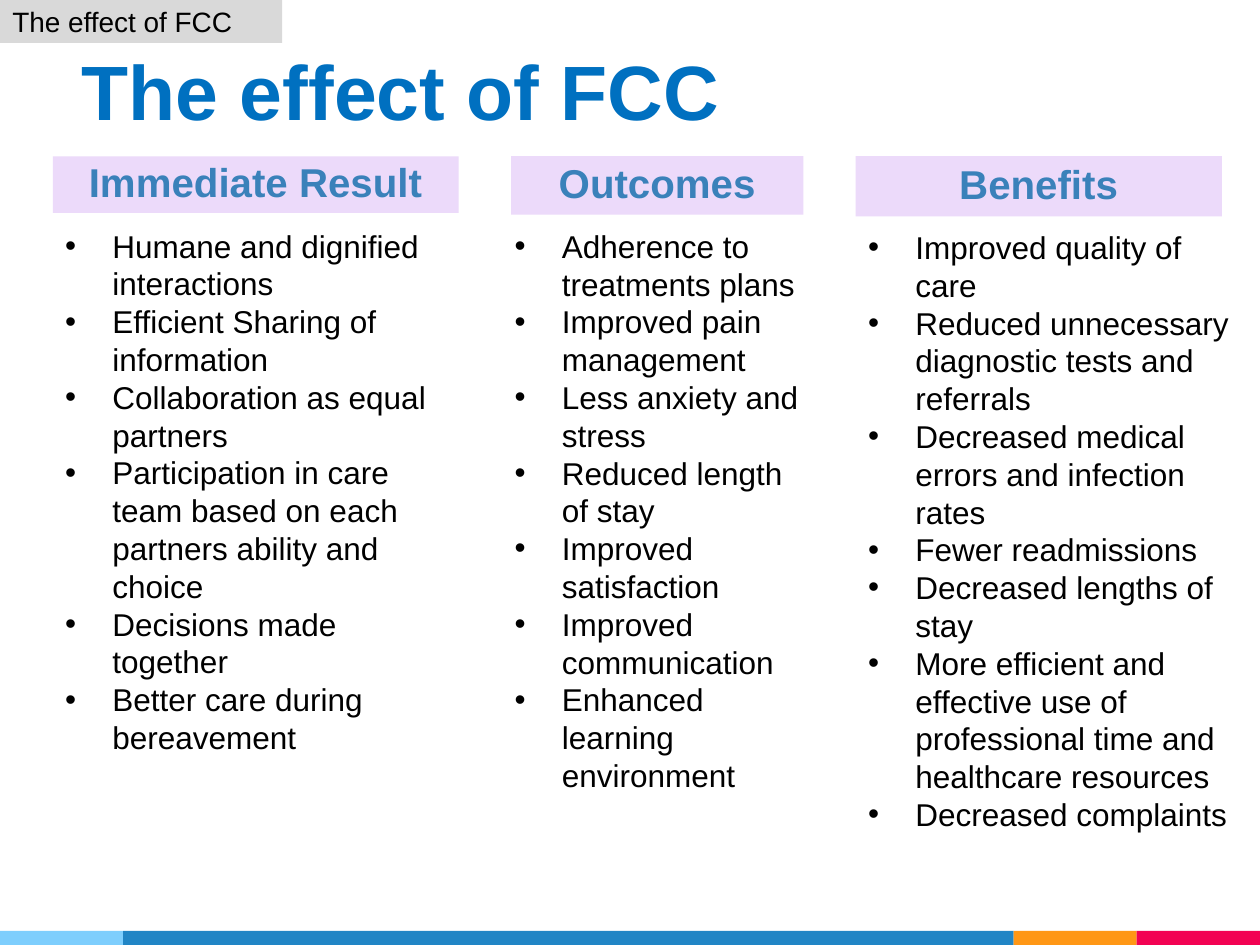
from dataclasses import dataclass

from lxml import etree
from pptx import Presentation
from pptx.dml.color import RGBColor
from pptx.enum.shapes import MSO_SHAPE
from pptx.enum.text import MSO_ANCHOR, MSO_AUTO_SIZE, PP_ALIGN
from pptx.oxml.ns import qn
from pptx.util import Pt

RECTANGLE = MSO_SHAPE.RECTANGLE
LEFT, CENTER = PP_ALIGN.LEFT, PP_ALIGN.CENTER
MIDDLE, BOTTOM = MSO_ANCHOR.MIDDLE, MSO_ANCHOR.BOTTOM
NO_FIT, GROW = MSO_AUTO_SIZE.NONE, MSO_AUTO_SIZE.SHAPE_TO_FIT_TEXT

FONT = "Arial"
SLIDE_WIDTH, SLIDE_HEIGHT = 720, 540
FOOTER_HEIGHT = 8
HEADER_TOP = 89.3
BULLET_INDENT = 27


@dataclass
class Box:
    left: float
    top: float
    width: float
    height: float

    def lengths(self) -> tuple:
        return Pt(self.left), Pt(self.top), Pt(self.width), Pt(self.height)


@dataclass
class Column:
    heading: str
    header: Box
    body: Box
    items: list[str]


COLUMNS = [
    Column("Immediate Result", Box(30.2, HEADER_TOP, 232, 32.4), Box(30.2, 126, 232, 312.5), [
        "Humane and dignified interactions",
        "Efficient Sharing of information",
        "Collaboration as equal partners",
        "Participation in care team based on each partners ability and choice",
        "Decisions made together",
        "Better care during bereavement",
    ]),
    Column("Outcomes", Box(292.1, HEADER_TOP, 167, 33.4), Box(287, 126, 177.3, 334), [
        "Adherence to treatments plans",
        "Improved pain management",
        "Less anxiety and stress",
        "Reduced length of stay",
        "Improved satisfaction",
        "Improved communication",
        "Enhanced learning environment",
    ]),
    Column("Benefits", Box(489, HEADER_TOP, 209.2, 34.4), Box(489, 126.7, 224.6, 356.4), [
        "Improved quality of care",
        "Reduced unnecessary diagnostic tests and referrals",
        "Decreased medical errors and infection rates",
        "Fewer readmissions",
        "Decreased lengths of stay",
        "More efficient and effective use of professional time and healthcare resources",
        "Decreased complaints",
    ]),
]

# Footer band: width and colour, from left to right
FOOTER = [(70.3, "7ECEFD"), (508.9, "2185C5"), (70.4, "FF9715"), (70.4, "F20253")]


def color(value: str) -> RGBColor:
    return RGBColor.from_string(value)


def write(paragraph, text: str, *, size: float, hex_color: str = "000000", bold: bool = False,
          align=LEFT, spacing=None, bullet: bool = False) -> None:
    if bullet:
        properties = paragraph._p.get_or_add_pPr()
        properties.set("marL", str(Pt(BULLET_INDENT)))
        properties.set("indent", str(-Pt(BULLET_INDENT)))
        etree.SubElement(properties, qn("a:buFont")).set("typeface", FONT)
        etree.SubElement(properties, qn("a:buChar")).set("char", "•")
    paragraph.alignment = align
    if spacing is not None:
        paragraph.line_spacing = spacing
    run = paragraph.add_run()
    run.text = text
    run.font.name = FONT
    run.font.size = Pt(size)
    run.font.bold = bold
    run.font.color.rgb = color(hex_color)


def set_insets(frame, horizontal: float, vertical: float) -> None:
    frame.margin_left = frame.margin_right = Pt(horizontal)
    frame.margin_top = frame.margin_bottom = Pt(vertical)


def add_rectangle(slide, box: Box, fill: str):
    shape = slide.shapes.add_shape(RECTANGLE, *box.lengths())
    shape.shadow.inherit = False
    shape.fill.solid()
    shape.fill.fore_color.rgb = color(fill)
    shape.line.fill.background()
    shape.text_frame.vertical_anchor = MIDDLE
    return shape


def add_footer(slide) -> None:
    left = 0
    for width, fill in FOOTER:
        add_rectangle(slide, Box(left, SLIDE_HEIGHT - FOOTER_HEIGHT, width, FOOTER_HEIGHT), fill)
        left += width


def add_title(slide, text: str) -> None:
    title = slide.shapes.title
    title.left, title.top, title.width, title.height = Box(39.6, 20.9, 630.7, 64.1).lengths()
    frame = title.text_frame
    frame.auto_size = NO_FIT
    frame.vertical_anchor = BOTTOM
    set_insets(frame, 7.2, 7.2)
    write(frame.paragraphs[0], text, size=44, hex_color="0070C0", bold=True)


def add_column(slide, column: Column) -> None:
    # Bulleted list
    body = slide.shapes.add_textbox(*column.body.lengths())
    frame = body.text_frame
    frame.word_wrap = True
    frame.auto_size = GROW
    for index, item in enumerate(column.items):
        paragraph = frame.add_paragraph() if index else frame.paragraphs[0]
        write(paragraph, item, size=18, spacing=Pt(21.6), bullet=True)

    # Heading bar
    header = add_rectangle(slide, column.header, "ECDAFA")
    set_insets(header.text_frame, 3.6, 2.2)
    write(header.text_frame.paragraphs[0], column.heading, size=23, hex_color="3A81BA",
          bold=True, align=CENTER, spacing=0.9)


def main() -> None:
    presentation = Presentation()
    presentation.slide_width, presentation.slide_height = Pt(SLIDE_WIDTH), Pt(SLIDE_HEIGHT)
    slide = presentation.slides.add_slide(presentation.slide_layouts[5])

    add_footer(slide)
    add_title(slide, "The effect of FCC")

    # Section tag in the corner
    tag = add_rectangle(slide, Box(0, 0, 161.3, 24.5), "D9D9D9")
    write(tag.text_frame.paragraphs[0], "The effect of FCC", size=16)

    for column in COLUMNS:
        add_column(slide, column)
    presentation.save("out.pptx")


if __name__ == "__main__":
    main()
